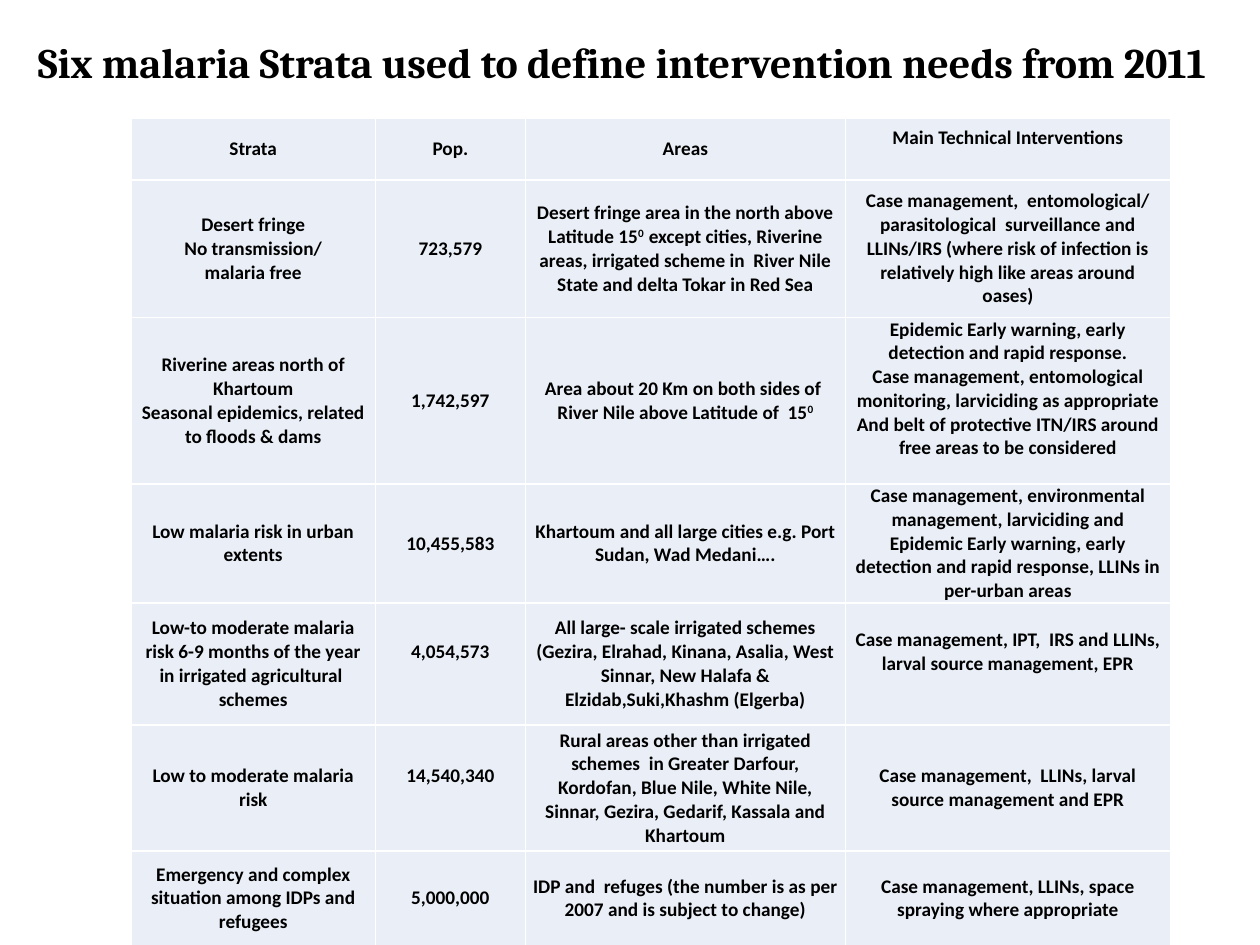
from lxml import etree
from pptx import Presentation
from pptx.dml.color import RGBColor
from pptx.enum.text import MSO_ANCHOR, PP_ALIGN
from pptx.oxml.ns import qn
from pptx.util import Inches, Pt

MIDDLE = MSO_ANCHOR.MIDDLE
LEFT, CENTER = PP_ALIGN.LEFT, PP_ALIGN.CENTER

COLORS = {"text": "000000", "cell": "EAEFF7", "border": "FFFFFF"}
COL_WIDTHS = [1.94, 1.19, 2.54, 2.58]
ROW_HEIGHTS = [0.49, 1.09, 0.97, 0.83, 0.97, 1, 0.75]
LINE_SPACE = 0.19

# Text between ^ marks is superscript
STRATA = [
    ["Strata", "Pop.", "Areas", "Main Technical Interventions"],
    ["Desert fringe\nNo transmission/\nmalaria free",
     "723,579",
     "Desert fringe area in the north above Latitude 15^0  ^except cities, "
     "Riverine areas, irrigated scheme in  River Nile State and delta Tokar "
     "in Red Sea",
     "Case management,  entomological/ parasitological  surveillance and "
     "LLINs/IRS (where risk of infection is relatively high like areas "
     "around oases)"],
    ["Riverine areas north of Khartoum\n"
     "Seasonal epidemics, related to floods & dams",
     "1,742,597",
     "Area about 20 Km on both sides of  River Nile above Latitude of  15^0^",
     "Epidemic Early warning, early detection and rapid response.\n"
     "Case management, entomological monitoring, larviciding as appropriate\n"
     "And belt of protective ITN/IRS around free areas to be considered"],
    ["Low malaria risk in urban extents",
     "10,455,583",
     "Khartoum and all large cities e.g. Port Sudan, Wad Medani….",
     "Case management, environmental management, larviciding and Epidemic "
     "Early warning, early detection and rapid response, LLINs in per-urban "
     "areas"],
    ["Low-to moderate malaria risk 6-9 months of the year in irrigated "
     "agricultural  schemes",
     "4,054,573",
     "All large- scale irrigated schemes (Gezira, Elrahad, Kinana, Asalia, "
     "West Sinnar, New Halafa & Elzidab,Suki,Khashm (Elgerba)",
     "Case management, IPT,  IRS and LLINs, larval source management, EPR"],
    ["Low to moderate malaria risk",
     "14,540,340",
     "Rural areas other than irrigated schemes  in Greater Darfour, Kordofan, "
     "Blue Nile, White Nile, Sinnar, Gezira, Gedarif, Kassala and Khartoum",
     "Case management,  LLINs, larval source management and EPR"],
    ["Emergency and complex situation among IDPs and refugees",
     "5,000,000",
     "IDP and  refuges (the number is as per 2007 and is subject to change)",
     "Case management, LLINs, space spraying where appropriate"],
]
# Cells (row, column) whose text sits half a line above the middle
RAISED = {(0, 3), (2, 3), (4, 1), (4, 3), (5, 1)}


def format_run(r, size, font):
    r.font.size = Pt(size)
    r.font.name = font
    r.font.bold = True
    r.font.color.rgb = RGBColor.from_string(COLORS["text"])


def add_title(s, text):
    sp = s.shapes.title
    sp.left, sp.top = Inches(0.2), Inches(0.24)
    sp.width, sp.height = Inches(9.88), Inches(0.5)
    tf = sp.text_frame
    tf.text = text
    tf.word_wrap = False
    tf.vertical_anchor = MIDDLE
    p = tf.paragraphs[0]
    p.alignment = LEFT
    format_run(p.runs[0], 24, "Cambria")


def set_borders(cell):
    tc_pr = cell._tc.get_or_add_tcPr()
    for i, side in enumerate(("lnL", "lnR", "lnT", "lnB")):
        ln = etree.Element(qn("a:" + side), w=str(Pt(1)))
        fill = etree.SubElement(ln, qn("a:solidFill"))
        etree.SubElement(fill, qn("a:srgbClr"), val=COLORS["border"])
        tc_pr.insert(i, ln)


def fill_paragraph(p, text):
    p.alignment = CENTER
    for i, part in enumerate(text.split("^")):
        if part:
            r = p.add_run()
            r.text = part
            format_run(r, 11, "Calibri")
            if i % 2:
                r.font._element.set("baseline", "30000")


def fill_cell(cell, text, raised):
    cell.fill.solid()
    cell.fill.fore_color.rgb = RGBColor.from_string(COLORS["cell"])
    set_borders(cell)
    cell.vertical_anchor = MIDDLE
    cell.margin_left = cell.margin_right = Inches(0.06)
    cell.margin_top = 0
    cell.margin_bottom = Inches(LINE_SPACE if raised else 0)
    tf = cell.text_frame
    for i, line in enumerate(text.split("\n")):
        fill_paragraph(tf.add_paragraph() if i else tf.paragraphs[0], line)


def add_strata_table(s):
    table = s.shapes.add_table(
        len(STRATA), len(COL_WIDTHS), Inches(1.04), Inches(0.94),
        Inches(sum(COL_WIDTHS)), Inches(sum(ROW_HEIGHTS))).table
    for col, width in zip(table.columns, COL_WIDTHS):
        col.width = Inches(width)
    for row, height in zip(table.rows, ROW_HEIGHTS):
        row.height = Inches(height)
    for i, texts in enumerate(STRATA):
        for j, text in enumerate(texts):
            fill_cell(table.cell(i, j), text, (i, j) in RAISED)


def main():
    prs = Presentation()
    prs.slide_width, prs.slide_height = Inches(10), Inches(7.5)
    s = prs.slides.add_slide(prs.slide_layouts[5])
    add_strata_table(s)
    add_title(s, "Six malaria Strata used to define intervention needs from 2011")
    prs.save("out.pptx")


if __name__ == "__main__":
    main()
